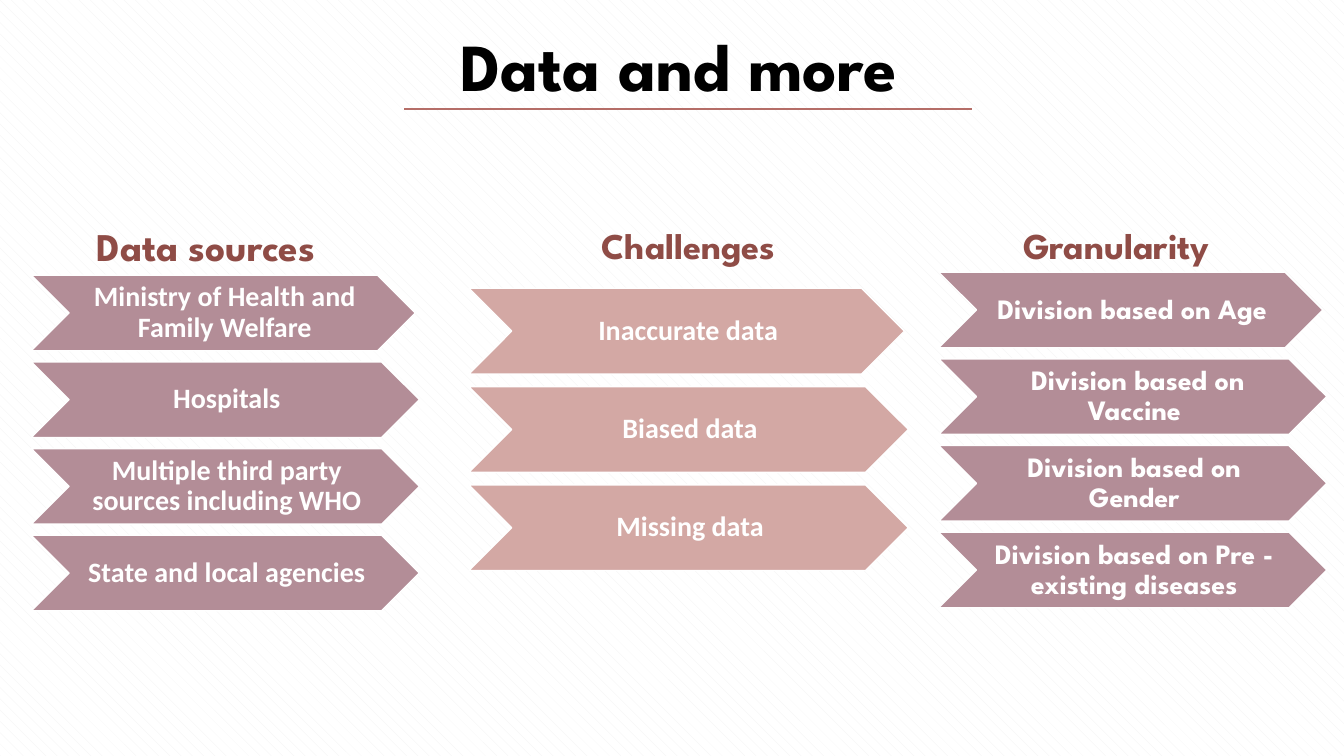
from pptx import Presentation, util as u
from pptx.dml.color import RGBColor
from pptx.enum import dml, shapes, text
from pptx.oxml.ns import qn
from lxml import etree

COLORS = {"black": "000000", "white": "FFFFFF", "hatch": "F2F2F2", "rule": "B56E68",
          "heading": "8F4C46", "mauve": "B38D97", "rose": "D3A8A4"}
BRAND, BODY = "League Spartan", "Calibri"


def color(name):
    return RGBColor.from_string(COLORS[name])


def write(shape, words, font, margins=None, **layout):
    """Put one paragraph in a shape, with font, margin and paragraph values."""
    frame = shape.text_frame
    frame.word_wrap = True
    for side, inches in (margins or {}).items():
        setattr(frame, f"margin_{side}", u.Inches(inches))
    para = frame.paragraphs[0]
    for name, value in layout.items():
        setattr(para, name, value)
    span = para.add_run()
    span.text = words
    face, size, shade = font
    for name, value in {"name": face, "size": u.Pt(size), "bold": True}.items():
        setattr(span.font, name, value)
    span.font.color.rgb = color(shade)
    return frame


deck = Presentation()
deck.slide_width, deck.slide_height = u.Inches(13.33), u.Inches(7.5)
page = deck.slides.add_slide(deck.slide_layouts[6])

# Hatched background
backdrop = page.background.fill
backdrop.patterned()
backdrop.pattern = dml.MSO_PATTERN.SHINGLE
backdrop.fore_color.rgb = color("hatch")
backdrop.back_color.rgb = color("white")

# Title and its rule
title = page.shapes.add_textbox(*map(u.Inches, (1.57, 0.19, 10.5, 0.91)))
write(title, "Data and more ", (BRAND, 48, "black"), alignment=text.PP_ALIGN.CENTER)
rule = page.shapes.add_connector(shapes.MSO_CONNECTOR.STRAIGHT,
                                 *map(u.Inches, (4.01, 1.08, 9.64, 1.08)))
rule.line.color.rgb = color("rule")
rule.line.width = u.Pt(1.5)
etree.SubElement(rule._element.spPr, qn("a:effectLst"))

# Columns: heading, its box, size, alignment and line spacing, then the
# chevrons' left, top, width, height, row pitch, fill, font and labels
LEFT, CENTER = text.PP_ALIGN.LEFT, text.PP_ALIGN.CENTER
columns = [
    ("Data sources", (0.86, 2.21, 2.74, 0.75), 28, LEFT, 0.9,
     0.31, 2.73, 3.85, 0.75, 0.86, "mauve", BODY,
     ["Ministry of Health and Family Welfare", "Hospitals",
      "Multiple third party sources including WHO", "State and local agencies"]),
    ("Challenges", (5.28, 2.28, 3.1, 0.41), 25.9, CENTER, 0.7,
     4.65, 2.86, 4.36, 0.85, 0.975, "rose", BODY,
     ["Inaccurate data", "Biased data", "Missing data"]),
    ("Granularity", (10.05, 2.21, 2.74, 0.75), 26, LEFT, 0.9,
     9.31, 2.7, 3.85, 0.75, 0.86, "mauve", BRAND,
     ["Division based on Age", " Division based on Vaccine",
      "Division based on Gender", "Division based on Pre - existing diseases"]),
]
for (heading, place, size, align, spacing,
     left, top, width, height, pitch, fill, face, labels) in columns:
    box = page.shapes.add_textbox(*map(u.Inches, place))
    write(box, heading, (BRAND, size, "heading"), alignment=align,
          line_spacing=spacing, space_before=u.Pt(10))
    for row, label in enumerate(labels):
        # The first chevron of each column is slightly shorter
        length = width if row else width - 0.04
        chevron = page.shapes.add_shape(
            shapes.MSO_SHAPE.CHEVRON,
            *map(u.Inches, (left, top + row * pitch, length, height)))
        chevron.shadow.inherit = False
        chevron.fill.solid()
        chevron.fill.fore_color.rgb = color(fill)
        chevron.line.color.rgb = color("white")
        chevron.line.width = u.Pt(1)
        frame = write(chevron, label, (face, 20, "white"),
                      {"left": 0.03, "top": 0.01, "right": 0, "bottom": 0.01},
                      alignment=CENTER, line_spacing=0.9)
        frame.vertical_anchor = text.MSO_ANCHOR.MIDDLE

deck.save("out.pptx")
